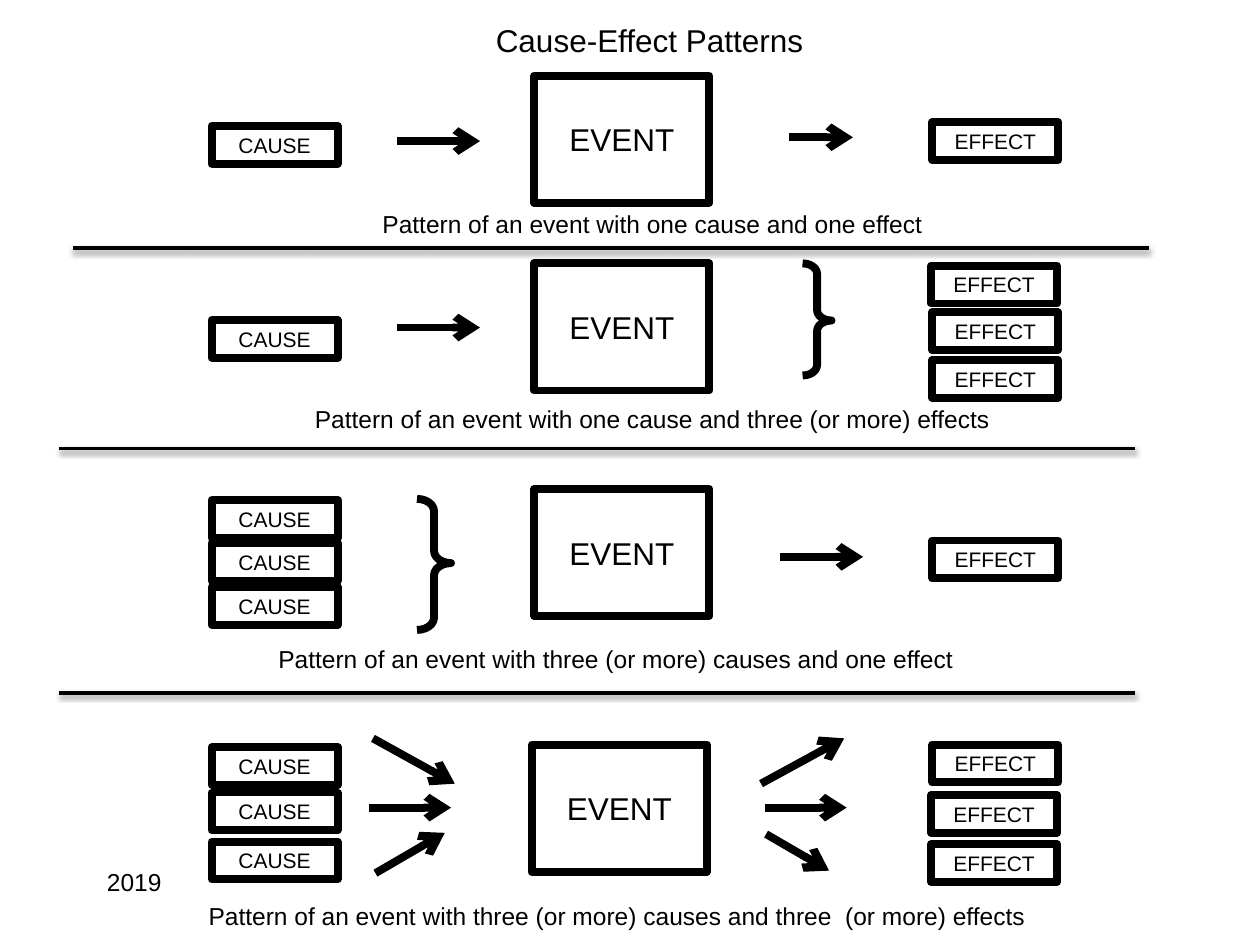
import pptx
import pptx.util
import pptx.dml.color
import pptx.enum.shapes
import pptx.enum.text
import pptx.oxml.ns
import lxml.etree

Inches = pptx.util.Inches
Pt = pptx.util.Pt
SHAPE = pptx.enum.shapes.MSO_SHAPE
ALIGN = pptx.enum.text.PP_ALIGN
ANCHOR = pptx.enum.text.MSO_ANCHOR
BLACK, WHITE = "000000", "FFFFFF"

# Offsets are inches from the left and top of each row's box.
# Arrows: x1, y1, x2, y2. Brace: x, y, width, height, point.
ROWS = [
    dict(top=0.6, event=4.24, causes=[(1.68, 0.4)], effects=[(7.4, 0.37)],
         arrows=[(3.15, 0.52, 3.81, 0.52), (6.26, 0.49, 6.77, 0.49)],
         label=(1.68, 1.01, "Pattern of an event with one cause and one effect")),
    dict(top=2.09, event=4.24, causes=[(1.68, 0.45)],
         effects=[(7.39, 0.02), (7.4, 0.39), (7.4, 0.77)],
         arrows=[(3.15, 0.51, 3.81, 0.51)], brace=(6.37, 0, 0.23, 0.89, 0.51),
         label=(1.68, 1.07, "Pattern of an event with one cause and three (or more) effects")),
    dict(top=3.88, event=4.24, causes=[(1.68, 0.09), (1.68, 0.43), (1.68, 0.78)],
         effects=[(7.4, 0.41)],
         arrows=[(6.19, 0.54, 6.85, 0.54)], brace=(3.31, 0.08, 0.27, 1.04, 0.49),
         label=(1.39, 1.18, "Pattern of an event with three (or more) causes and one effect")),
    dict(top=5.91, event=4.22, causes=[(1.68, 0.02), (1.68, 0.38), (1.68, 0.77)],
         effects=[(7.4, 0), (7.39, 0.4), (7.39, 0.79)],
         arrows=[(2.96, -0.05, 3.61, 0.31), (2.93, 0.5, 3.58, 0.5),
                 (2.98, 1.02, 3.53, 0.7), (6.04, 0.31, 6.7, -0.05),
                 (6.07, 0.5, 6.72, 0.5), (6.08, 0.71, 6.58, 1)],
         label=(1.4, 1.19, "Pattern of an event with three (or more) causes "
                           "and three  (or more) effects")),
]
RULES = [(0.58, 1.97), (0.47, 3.56), (0.47, 5.5)]


def color(code):
    return pptx.dml.color.RGBColor.from_string(code)


def stroke(item, width):
    item.line.color.rgb = color(BLACK)
    item.line.width = Pt(width)


def child(parent, tag, **attrs):
    return lxml.etree.SubElement(parent, pptx.oxml.ns.qn(tag), attrs)


def write(shape, text, size, align=ALIGN.CENTER):
    frame = shape.text_frame
    frame.word_wrap = True
    frame.text = text
    para = frame.paragraphs[0]
    para.alignment = align
    font = para.runs[0].font
    font.name, font.size = "Arial", Pt(size)
    font.color.rgb = color(BLACK)


def note(slide, left, top, width, height, text, size, align=ALIGN.CENTER):
    box = slide.shapes.add_textbox(
        Inches(left), Inches(top), Inches(width), Inches(height))
    write(box, text, size, align)


def box(slide, left, top, width, height, text, size):
    shape = slide.shapes.add_shape(
        SHAPE.RECTANGLE, Inches(left), Inches(top), Inches(width), Inches(height))
    shape.shadow.inherit = False
    shape.fill.solid()
    shape.fill.fore_color.rgb = color(WHITE)
    stroke(shape, 4.5)
    write(shape, text, size)
    shape.text_frame.vertical_anchor = ANCHOR.MIDDLE if size > 12 else ANCHOR.TOP


def brace(slide, left, top, width, height, point):
    shape = slide.shapes.add_shape(
        SHAPE.RIGHT_BRACE, Inches(left), Inches(top), Inches(width), Inches(height))
    shape.shadow.inherit = False
    shape.adjustments[0], shape.adjustments[1] = 0.36, point
    shape.fill.background()
    stroke(shape, 4.5)


def line(slide, x1, y1, x2, y2, width):
    """Draw a straight line and return it with its empty effect list."""
    item = slide.shapes.add_connector(
        pptx.enum.shapes.MSO_CONNECTOR.STRAIGHT,
        Inches(x1), Inches(y1), Inches(x2), Inches(y2))
    stroke(item, width)
    return item, child(item._element.spPr, "a:effectLst")


def arrow(slide, x1, y1, x2, y2):
    item, _ = line(slide, x1, y1, x2, y2, 4.5)
    child(item.line._get_or_add_ln(), "a:tailEnd", type="arrow")


def rule(slide, left, top, width):
    _, effect = line(slide, left, top, left + width, top, 2)
    shade = child(effect, "a:outerShdw", blurRad=str(Pt(3.1)), dist=str(Pt(1.6)),
                  dir="5400000", rotWithShape="0")
    child(child(shade, "a:srgbClr", val=BLACK), "a:alpha", val="38000")


def pattern(slide, left, row):
    top = row["top"]
    # Causes, event and effects
    for name, places in (("CAUSE", row["causes"]), ("EFFECT", row["effects"])):
        for x, y in places:
            box(slide, left + x, top + y, 1, 0.3, name, 12)
    box(slide, left + row["event"], top, 1.39, 1.01, "EVENT", 18)
    # Links between them
    for x1, y1, x2, y2 in row["arrows"]:
        arrow(slide, left + x1, top + y1, left + x2, top + y2)
    if "brace" in row:
        x, y, width, height, point = row["brace"]
        brace(slide, left + x, top + y, width, height, point)
    # Caption
    x, y, text = row["label"]
    note(slide, left + x, top + y, 7, 0.34, text, 14)


def main():
    deck = pptx.Presentation()
    deck.slide_width, deck.slide_height = Inches(10), Inches(7.5)
    slide = deck.slides.add_slide(deck.slide_layouts[6])
    for row in ROWS:
        pattern(slide, 0, row)
    # Title, dividers and year
    note(slide, 1.33, 0.12, 7.65, 0.4, "Cause-Effect Patterns", 18)
    for left, top in RULES:
        rule(slide, left, top, 8.54)
    note(slide, 0.75, 6.83, 2.08, 0.5, "2019", 14, ALIGN.LEFT)
    deck.save("out.pptx")


if __name__ == "__main__":
    main()
